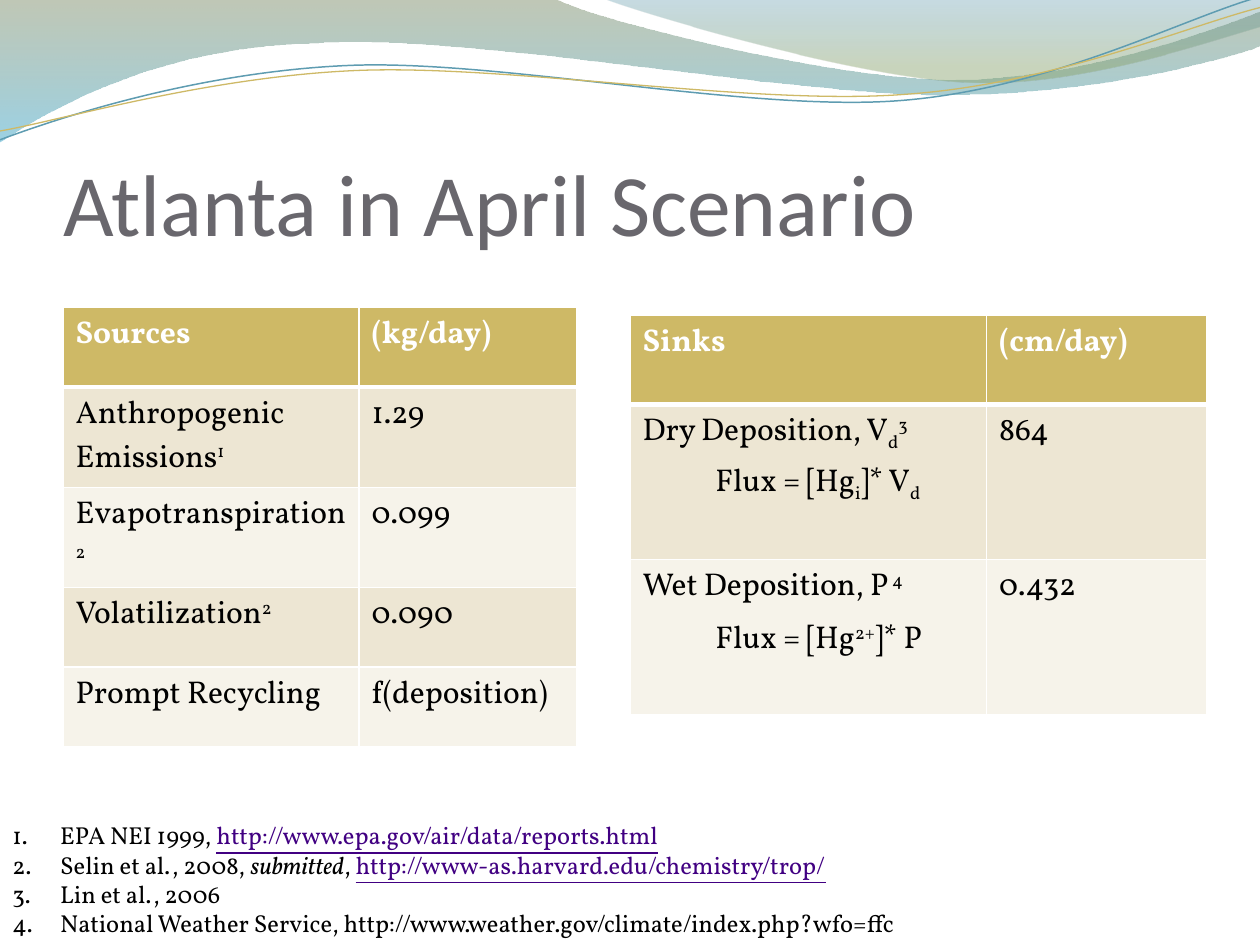
from pptx import Presentation
from pptx.dml.color import RGBColor
from pptx.enum import text
from pptx.oxml import parse_xml
from pptx.oxml.ns import nsdecls, qn
from pptx.util import Inches, Pt

BODY_FONT = "Vollkorn"
GOLD, LINK = "CEB966", "410082"
BANDS = ["EDE6D3", "F6F3EA"]
SUPER, SUB = {"baseline": 30}, {"baseline": -25}
URL = {"color": LINK, "underline": True}

# Each wave is a list of steps: 2 numbers for a straight line, 6 for a cubic curve.
BANNERS = [
    ([(0, 0), (4.4, -0.01), (4.76, 0.17, 6.64, 0.63, 7.58, 0.63),
      (8.53, 0.63, 9.58, 0.26, 10, 0.09), (10.01, 0.36),
      (9.83, 0.44, 8.7, 0.76, 7.46, 0.75), (6.22, 0.75, 3.82, 0.28, 2.57, 0.34),
      (1.29, 0.36, 0.46, 0.83, -0.01, 1.13), (0, 0)],
     [(0, "74855E", 45), (1, "4AACCE", 55)]),
    ([(4.79, -0.01), (5.09, 0.11, 6.82, 0.62, 7.69, 0.65),
      (8.56, 0.69, 9.61, 0.32, 10, 0.21), (10, 0), (4.79, -0.01)],
     [(0, "45889F", 30), (0.8, "8AA36D", 45)]),
]
STRANDS = [
    ([(0, 1.11), (0.48, 0.93, 1.58, 0.57, 2.77, 0.52),
      (3.95, 0.47, 5.93, 0.89, 7.13, 0.8), (8.33, 0.71, 9.38, 0.15, 9.98, -0.02)],
     "5E9CB1", 0.85),
    ([(0, 1.04), (0.47, 0.96, 1.64, 0.61, 2.83, 0.56),
      (4.03, 0.51, 5.97, 0.84, 7.17, 0.75), (8.36, 0.67, 9.41, 0.21, 10, 0.06)],
     GOLD, 0.75),
]

# A text is a list of (words, style) runs.
SOURCES = [
    ([("Sources", {})], [("(kg/day)", {})]),
    ([("Anthropogenic Emissions", {}), ("1", SUPER)], [("1.29", {})]),
    ([("Evapotranspiration", {}), ("2", SUPER)], [("0.099", {})]),
    ([("Volatilization", {}), ("2", SUPER)], [("0.090", {})]),
    ([("Prompt Recycling", {})], [("f(deposition)", {})]),
]
SINKS = [
    ([("Sinks", {})], [("(cm/day)", {})]),
    ([("Dry Deposition, V", {}), ("d", SUB), ("3", SUPER)], [("864", {})]),
    ([("Wet Deposition, P", {}), (" 4", SUPER)], [("0.432", {})]),
]
TABLES = [
    (SOURCES, 0.5, 2.44, [2.35, 1.73], [0.63, 0.76, 0.67, 0.63, 0.63]),
    (SINKS, 5, 2.5, [2.83, 1.75], [0.71, 1.23, 1.23]),
]
FLUXES = [
    (3.6, [("Flux = [Hg", {}), ("i", SUB), ("]* V", {}), ("d", SUB)]),
    (4.85, [("Flux = [Hg", {}), ("2+", SUPER), ("]* P", {})]),
]
REFERENCES = [
    [("EPA NEI 1999, ", {}), ("http://www.epa.gov/air/data/reports.html", URL)],
    [("Selin et al., 2008, ", {}), ("submitted", {"italic": True}), (", ", {}),
     ("http://www-as.harvard.edu/chemistry/trop/", URL)],
    [("Lin et al., 2006", {})],
    [("National Weather Service, "
      "http://www.weather.gov/climate/index.php?wfo=ffc", {})],
]


def rgb(value):
    return RGBColor.from_string(value)


def add_wave(slide, steps, close):
    """Build the outline through the end points, then bend its cubic steps."""
    ends = [(Inches(step[-2]), Inches(step[-1])) for step in steps]
    builder = slide.shapes.build_freeform(*ends[0])
    builder.add_line_segments(ends[1:], close=close)
    shape = builder.convert_to_shape()
    shape.shadow.inherit = False
    lines = list(shape._element.spPr.iter(qn("a:lnTo")))
    for line, step in zip(lines, steps[1:]):
        if len(step) == 6:
            points = "".join(
                f'<a:pt x="{Inches(x) - shape.left}" y="{Inches(y) - shape.top}"/>'
                for x, y in zip(step[::2], step[1::2]))
            line.getparent().replace(line, parse_xml(
                f'<a:cubicBezTo {nsdecls("a")}>{points}</a:cubicBezTo>'))
    return shape


def add_banner(slide, steps, stops):
    shape = add_wave(slide, steps, True)
    shape.line.fill.background()
    shape.fill.gradient()
    shape.fill.gradient_angle = 270
    for stop, (position, color, _) in zip(shape.fill.gradient_stops, stops):
        stop.position = position
        stop.color.rgb = rgb(color)
    colors = shape._element.spPr.iter(qn("a:srgbClr"))
    for element, (_, _, opacity) in zip(list(colors), stops):
        element.append(parse_xml(f'<a:alpha {nsdecls("a")} val="{opacity * 1000}"/>'))


def add_strand(slide, steps, color, width):
    shape = add_wave(slide, steps, False)
    shape.fill.background()
    shape.line.color.rgb = rgb(color)
    shape.line.width = Pt(width)


def write(paragraph, runs, size=18, color="000000", bold=False):
    font = paragraph.font
    font.name, font.size, font.bold = BODY_FONT, Pt(size), bold
    font.color.rgb = rgb(color)
    for words, style in runs:
        run = paragraph.add_run()
        run.text = words
        if "baseline" in style:
            run.font._element.set("baseline", str(style["baseline"] * 1000))
        if "color" in style:
            run.font.color.rgb = rgb(style["color"])
        run.font.underline = style.get("underline")
        run.font.italic = style.get("italic")


def set_borders(cell, top, bottom):
    properties = cell._tc.get_or_add_tcPr()
    for i, (side, width) in enumerate([("L", 1), ("R", 1), ("T", top), ("B", bottom)]):
        properties.insert(i, parse_xml(
            f'<a:ln{side} {nsdecls("a")} w="{Pt(width)}"><a:solidFill>'
            f'<a:srgbClr val="FFFFFF"/></a:solidFill></a:ln{side}>'))


def add_table(slide, rows, left, top, widths, heights):
    table = slide.shapes.add_table(
        len(rows), len(widths), Inches(left), Inches(top),
        Inches(sum(widths)), Inches(sum(heights))).table
    table.horz_banding = False
    for column, width in zip(table.columns, widths):
        column.width = Inches(width)
    for r, (row, height) in enumerate(zip(rows, heights)):
        table.rows[r].height = Inches(height)
        header = r == 0
        for c, runs in enumerate(row):
            cell = table.cell(r, c)
            cell.fill.solid()
            cell.fill.fore_color.rgb = rgb(GOLD if header else BANDS[(r - 1) % 2])
            set_borders(cell, 3 if r == 1 else 1, 3 if header else 1)
            write(cell.text_frame.paragraphs[0], runs,
                  color="FFFFFF" if header else "000000", bold=header)


def add_text(slide, left, top, width, height, lines, size=18, numbered=False):
    frame = slide.shapes.add_textbox(
        Inches(left), Inches(top), Inches(width), Inches(height)).text_frame
    frame.word_wrap = True
    frame.auto_size = text.MSO_AUTO_SIZE.SHAPE_TO_FIT_TEXT
    for i, runs in enumerate(lines):
        paragraph = frame.add_paragraph() if i else frame.paragraphs[0]
        if numbered:
            properties = paragraph._p.get_or_add_pPr()
            properties.set("marL", str(Inches(0.38)))
            properties.set("indent", str(-Inches(0.38)))
            properties.append(parse_xml(
                f'<a:buAutoNum {nsdecls("a")} type="arabicPeriod"/>'))
        write(paragraph, runs, size)


def set_title(slide, words):
    title = slide.shapes.title
    title.left, title.top = Inches(0.5), Inches(0.77)
    title.width, title.height = Inches(9), Inches(1.25)
    frame = title.text_frame
    frame.text = words
    frame.vertical_anchor = text.MSO_ANCHOR.BOTTOM
    frame.margin_left = frame.margin_right = frame.margin_bottom = 0
    frame.margin_top = Inches(0.05)
    paragraph = frame.paragraphs[0]
    paragraph.alignment = text.PP_ALIGN.LEFT
    paragraph.font.name, paragraph.font.size = "Calibri", Pt(50)
    paragraph.font.color.rgb = rgb("69676D")


def main():
    presentation = Presentation()
    presentation.slide_width, presentation.slide_height = Inches(10), Inches(7.5)
    slide = presentation.slides.add_slide(presentation.slide_layouts[5])
    for steps, stops in BANNERS:
        add_banner(slide, steps, stops)
    for strand in STRANDS:
        add_strand(slide, *strand)
    set_title(slide, "Atlanta in April Scenario")
    for table in TABLES:
        add_table(slide, *table)
    add_text(slide, 0, 6.46, 9.83, 1.04, REFERENCES, size=14, numbered=True)
    for top, runs in FLUXES:
        add_text(slide, 5.58, top, 1.92, 0.4, [runs])
    presentation.save("out.pptx")


if __name__ == "__main__":
    main()
